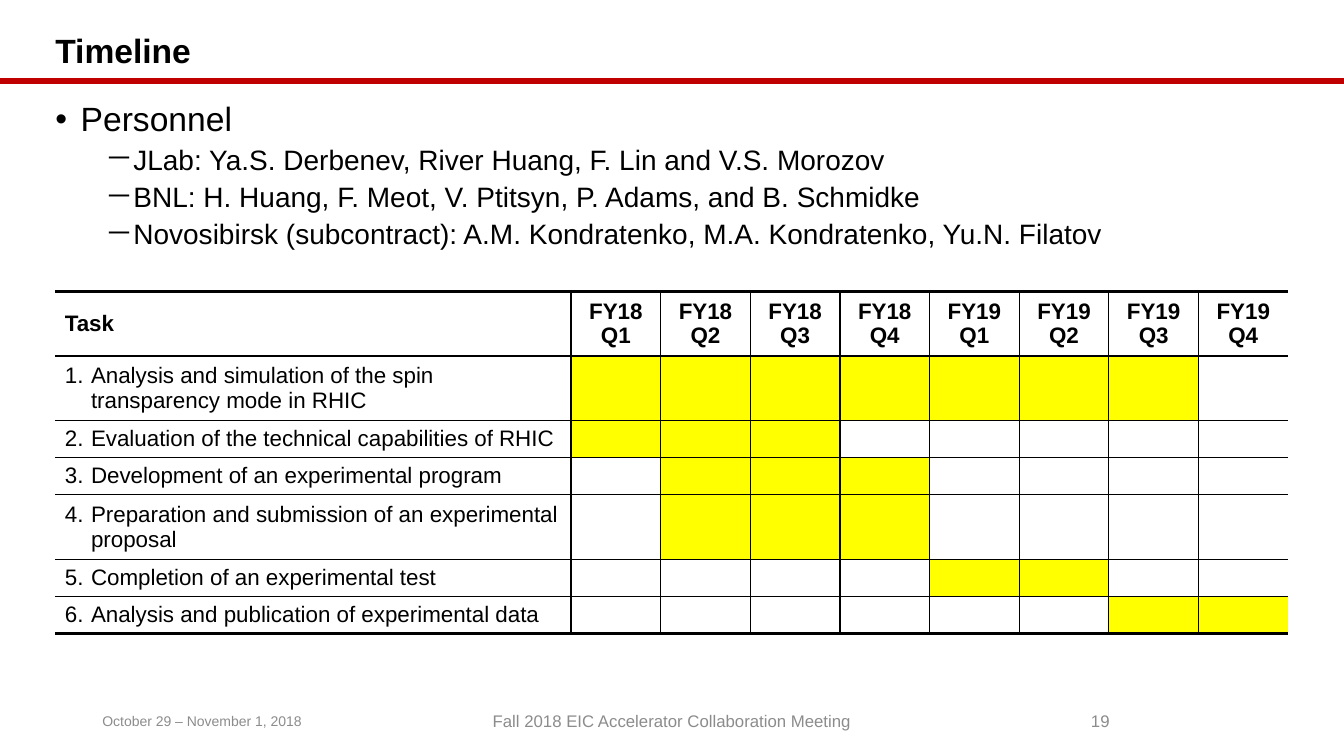
import pptx
import pptx.dml.color
import pptx.enum.shapes
import pptx.enum.text
import pptx.oxml
import pptx.util
from pptx.oxml.ns import nsdecls

Cm, Pt = pptx.util.Cm, pptx.util.Pt
ALIGN = pptx.enum.text.PP_ALIGN
MIDDLE = pptx.enum.text.MSO_ANCHOR.MIDDLE
BLACK, GREY, RED, YELLOW = "000000", "8C8C8C", "C00000", "FFFF00"

TEAM = [
    "JLab: Ya.S. Derbenev, River Huang, F. Lin and V.S. Morozov",
    "BNL: H. Huang, F. Meot, V. Ptitsyn, P. Adams, and B. Schmidke",
    "Novosibirsk (subcontract): A.M. Kondratenko, M.A. Kondratenko, Yu.N. Filatov",
]
TERMS = [f"FY{year} Q{part}" for year in (18, 19) for part in range(1, 5)]
# Task, first and last quarter (1 to 8), row height in cm
TASKS = [
    ("Analysis and simulation of the spin transparency mode in RHIC", 1, 7, 1.62),
    ("Evaluation of the technical capabilities of RHIC", 1, 3, 0.94),
    ("Development of an experimental program", 2, 4, 0.94),
    ("Preparation and submission of an experimental proposal", 2, 4, 1.62),
    ("Completion of an experimental test", 5, 6, 0.94),
    ("Analysis and publication of experimental data", 7, 8, 0.94),
]
FOOT = [
    ("October 29 – November 1, 2018", 2.33, 7.62, 10, ALIGN.LEFT),
    ("Fall 2018 EIC Accelerator Collaboration Meeting", 11.22, 11.43, 12, ALIGN.CENTER),
    ("19", 23.92, 7.62, 12, ALIGN.CENTER),
]


def color(code):
    return pptx.dml.color.RGBColor.from_string(code)


def apply(item, form):
    """Set each attribute named in form."""
    for name, value in form.items():
        setattr(item, name, value)


def place(shape, left, top, width, height):
    apply(shape, {"left": Cm(left), "top": Cm(top),
                  "width": Cm(width), "height": Cm(height)})


def write(para, text, size, bold=False, tint=BLACK, **form):
    run = para.add_run()
    run.text = text
    apply(run.font, {"name": "Arial", "size": Pt(size), "bold": bold})
    run.font.color.rgb = color(tint)
    apply(para, form)


def indent(para, left, hang):
    props = para._p.get_or_add_pPr()
    props.set("marL", str(Cm(left)))
    props.set("indent", str(-Cm(hang)))
    return props


def bullet(para, mark, left):
    props = indent(para, left, 0.64)
    props.append(pptx.oxml.parse_xml(
        f'<a:buFont {nsdecls("a")} typeface="Arial"/>'))
    props.append(pptx.oxml.parse_xml(
        f'<a:buChar {nsdecls("a")} char="{mark}"/>'))


def head(slide):
    title = slide.shapes.title
    place(title, 1.14, 0.66, 31.34, 1.35)
    apply(title.text_frame, {"vertical_anchor": MIDDLE, "word_wrap": True,
                             "auto_size": pptx.enum.text.MSO_AUTO_SIZE.NONE})
    write(title.text_frame.paragraphs[0], "Timeline", 24, True,
          alignment=ALIGN.LEFT, line_spacing=0.9)


def rule(slide):
    line = slide.shapes.add_connector(
        pptx.enum.shapes.MSO_CONNECTOR.STRAIGHT, Cm(0), Cm(2.04), Cm(33.87), Cm(2.04))
    line.line.color.rgb = color(RED)
    line.line.width = Pt(4.5)
    line._element.spPr.append(
        pptx.oxml.parse_xml(f'<a:effectLst {nsdecls("a")}/>'))


def people(slide):
    body = slide.placeholders[1]
    place(body, 1.14, 2.46, 31.34, 4.5)
    frame = body.text_frame
    apply(frame, {"word_wrap": True,
                  "auto_size": pptx.enum.text.MSO_AUTO_SIZE.NONE})
    para = frame.paragraphs[0]
    bullet(para, "•", 0.64)
    write(para, "Personnel", 24, line_spacing=0.9, space_before=Pt(0))
    for names in TEAM:
        para = frame.add_paragraph()
        para.level = 1
        bullet(para, "－", 1.9)
        write(para, names, 20, line_spacing=0.9, space_before=Pt(5))


def border(cell, side, width):
    """Draw one side of a cell; a width of 0 hides it."""
    paint = (f'<a:solidFill><a:srgbClr val="{BLACK}"/></a:solidFill>'
             if width else "<a:noFill/>")
    cell._tc.get_or_add_tcPr().append(pptx.oxml.parse_xml(
        f'<a:ln{side} {nsdecls("a")} w="{Pt(width)}">{paint}</a:ln{side}>'))


def frame(cell, row, col):
    border(cell, "L", 1 if col else 0)
    border(cell, "R", 1 if col < len(TERMS) else 0)
    border(cell, "T", 2.25 if row < 2 else 1)
    border(cell, "B", 2.25 if row in (0, len(TASKS)) else 1)
    cell.fill.background()
    cell.vertical_anchor = MIDDLE


def blank(cell):
    """Keep an empty cell as low as the text rows."""
    cell.text_frame.paragraphs[0]._p.append(
        pptx.oxml.parse_xml(f'<a:endParaRPr {nsdecls("a")} sz="1600"/>'))


def chart(slide):
    grid = slide.shapes.add_table(
        len(TASKS) + 1, len(TERMS) + 1, Cm(1.38), Cm(7.35), Cm(31.09), Cm(8.62)).table
    apply(grid, {"first_row": False, "horz_banding": False})
    for col, part in enumerate(grid.columns):
        part.width = Cm(2.26 if col else 13.01)
    for row, part in enumerate(grid.rows):
        part.height = Cm(TASKS[row - 1][3] if row else 1.62)
        for col in range(len(TERMS) + 1):
            frame(grid.cell(row, col), row, col)
    for col, text in enumerate(["Task"] + TERMS):
        write(grid.cell(0, col).text_frame.paragraphs[0], text, 16, True,
              alignment=ALIGN.CENTER if col else ALIGN.LEFT)
    for row, (task, first, last, _) in enumerate(TASKS, 1):
        para = grid.cell(row, 0).text_frame.paragraphs[0]
        indent(para, 0.66, 0.66)
        write(para, f"{row}. \t{task}", 16)
        for col in range(1, len(TERMS) + 1):
            cell = grid.cell(row, col)
            blank(cell)
            if first <= col <= last:
                cell.fill.solid()
                cell.fill.fore_color.rgb = color(YELLOW)


def footer(slide):
    for text, left, width, size, align in FOOT:
        box = slide.shapes.add_textbox(Cm(left), Cm(17.65), Cm(width), Cm(1.01))
        apply(box.text_frame, {"word_wrap": True, "vertical_anchor": MIDDLE})
        write(box.text_frame.paragraphs[0], text, size, tint=GREY, alignment=align)


def main():
    deck = pptx.Presentation()
    apply(deck, {"slide_width": Cm(33.87), "slide_height": Cm(19.05)})
    slide = deck.slides.add_slide(deck.slide_layouts[1])
    rule(slide)
    head(slide)
    people(slide)
    footer(slide)
    chart(slide)
    deck.save("out.pptx")


if __name__ == "__main__":
    main()
